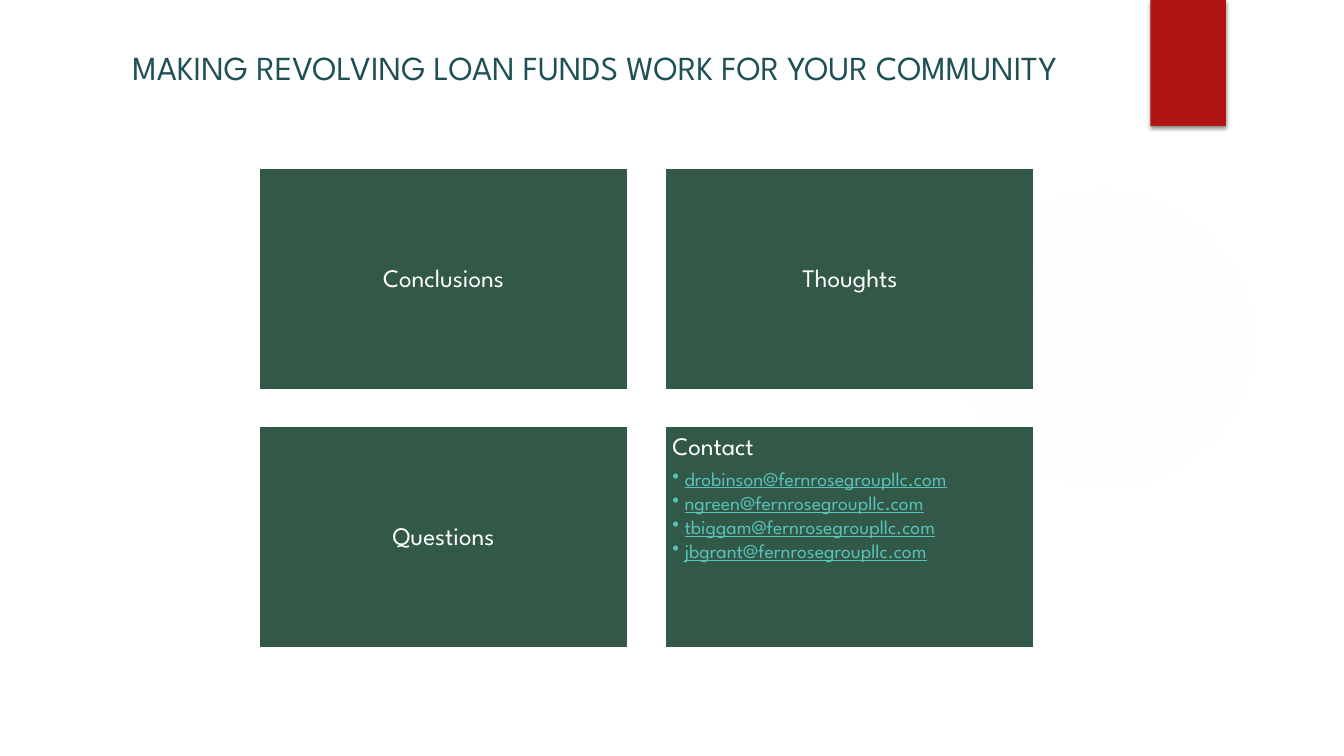
import pptx
import pptx.dml.color
import pptx.enum.shapes
import pptx.enum.text
import pptx.oxml
import pptx.oxml.ns
import pptx.util

Inches = pptx.util.Inches
Pt = pptx.util.Pt
SHAPES = pptx.enum.shapes.MSO_SHAPE
ALIGN = pptx.enum.text.PP_ALIGN
ANCHOR = pptx.enum.text.MSO_ANCHOR

TITLE = "MAKING REVOLVING LOAN FUNDS WORK FOR YOUR COMMUNITY"
TILES = [
    ("Conclusions", []),
    ("Thoughts", []),
    ("Questions", []),
    ("Contact", [
        "drobinson@fernrosegroupllc.com",
        "ngreen@fernrosegroupllc.com",
        "tbiggam@fernrosegroupllc.com",
        "jbgrant@fernrosegroupllc.com",
    ]),
]

THEME = {
    "font": "League Spartan",
    "title": "1E5155", "tile": "325948", "text": "FFFFFF",
    "email": "58C1BA", "ribbon": "B01513", "glow": "F3F3F3",
    "title_size": 24, "heading_size": 18, "email_size": 14,
}
GLOW_STOPS = [(0, 7), (36, 6), (69, 0)]  # position and opacity, percent

COLUMNS = 2
GRID_LEFT, GRID_TOP = 2.57, 1.67
TILE_WIDTH, TILE_HEIGHT = 3.66, 2.2
COLUMN_STEP, ROW_STEP = 4.03, 2.56
TILE_INSET = 0.07
BULLET_INDENT = 0.12


def rgb(name):
    return pptx.dml.color.RGBColor.from_string(THEME[name])


def xml(tag, attributes="", content=""):
    namespace = pptx.oxml.ns.nsdecls("a")
    return pptx.oxml.parse_xml(f"<a:{tag} {namespace} {attributes}>{content}</a:{tag}>")


def add_plain_shape(slide, kind, left, top, width, height):
    shape = slide.shapes.add_shape(
        kind, Inches(left), Inches(top), Inches(width), Inches(height))
    shape.shadow.inherit = False
    shape.line.fill.background()
    return shape


def add_text(paragraph, text, size, color):
    run = paragraph.add_run()
    run.text = text
    run.font.name = THEME["font"]
    run.font.size = Pt(THEME[size])
    run.font.color.rgb = rgb(color)
    return run


def add_glow(slide):
    glow = add_plain_shape(slide, SHAPES.OVAL, 9.41, 1.83, 3.08, 3.08)
    glow.fill.background()
    stops = "".join(
        f'<a:gs pos="{position * 1000}"><a:srgbClr val="{THEME["glow"]}">'
        f'<a:alpha val="{opacity * 1000}"/></a:srgbClr></a:gs>'
        for position, opacity in GLOW_STOPS)
    center = '<a:fillToRect l="50000" t="50000" r="50000" b="50000"/>'
    gradient = xml("gradFill", "", f'<a:gsLst>{stops}</a:gsLst>'
                   f'<a:path path="circle">{center}</a:path>')
    properties = glow.element.spPr
    properties.replace(properties.find(pptx.oxml.ns.qn("a:noFill")), gradient)


def add_ribbon(slide):
    ribbon = add_plain_shape(slide, SHAPES.RECTANGLE, 11.41, 0, 0.75, 1.25)
    ribbon.fill.solid()
    ribbon.fill.fore_color.rgb = rgb("ribbon")
    effects = ribbon.element.spPr.find(pptx.oxml.ns.qn("a:effectLst"))
    effects.append(xml(
        "outerShdw",
        f'blurRad="{Pt(3)}" dist="{Pt(2)}" dir="5400000" rotWithShape="0"',
        '<a:srgbClr val="000000"><a:alpha val="45000"/></a:srgbClr>'))


def add_title(slide):
    box = slide.shapes.add_textbox(
        Inches(0.42), Inches(0.42), Inches(10.96), Inches(1.61))
    box.text_frame.word_wrap = True
    paragraph = box.text_frame.paragraphs[0]
    paragraph.alignment = ALIGN.CENTER
    add_text(paragraph, TITLE, "title_size", "title")


def add_tile(slide, index, heading, emails):
    row, column = divmod(index, COLUMNS)
    tile = add_plain_shape(
        slide, SHAPES.RECTANGLE,
        GRID_LEFT + column * COLUMN_STEP, GRID_TOP + row * ROW_STEP,
        TILE_WIDTH, TILE_HEIGHT)
    tile.fill.solid()
    tile.fill.fore_color.rgb = rgb("tile")
    tile.line.color.rgb = rgb("text")
    tile.line.width = Pt(1.5)

    frame = tile.text_frame
    frame.word_wrap = True
    frame.margin_left = frame.margin_right = Inches(TILE_INSET)
    frame.margin_top = frame.margin_bottom = Inches(TILE_INSET)
    frame.vertical_anchor = ANCHOR.TOP if emails else ANCHOR.MIDDLE

    paragraph = frame.paragraphs[0]
    paragraph.alignment = ALIGN.LEFT if emails else ALIGN.CENTER
    paragraph.line_spacing = 0.9
    paragraph.space_after = Pt(0.35 * THEME["heading_size"])
    add_text(paragraph, heading, "heading_size", "text")

    for email in emails:
        paragraph = frame.add_paragraph()
        properties = paragraph._p.get_or_add_pPr()
        properties.set("marL", str(Inches(BULLET_INDENT)))
        properties.set("indent", str(Inches(-BULLET_INDENT)))
        properties.append(xml("buChar", 'char="•"'))
        paragraph.level = 1
        paragraph.alignment = ALIGN.LEFT
        paragraph.line_spacing = 0.9
        paragraph.space_after = Pt(0.15 * THEME["email_size"])
        add_text(paragraph, email, "email_size", "email").font.underline = True


def main():
    presentation = pptx.Presentation()
    presentation.slide_width = Inches(13.33)
    presentation.slide_height = Inches(7.5)
    slide = presentation.slides.add_slide(presentation.slide_layouts[6])
    add_glow(slide)
    add_ribbon(slide)
    add_title(slide)
    for index, (heading, emails) in enumerate(TILES):
        add_tile(slide, index, heading, emails)
    presentation.save("out.pptx")


if __name__ == "__main__":
    main()
